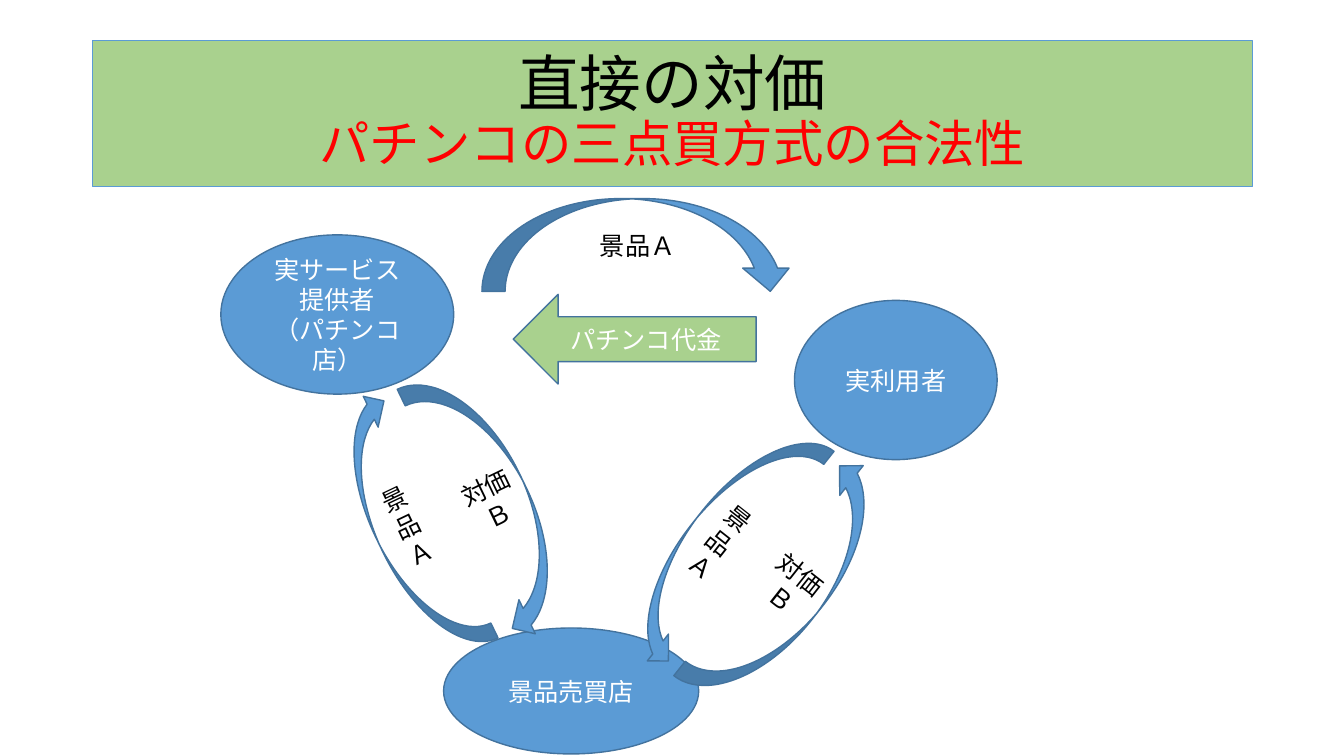
"""Build the slide on the three-party prize exchange."""
from dataclasses import dataclass

from pptx import Presentation
from pptx.dml.color import RGBColor
from pptx.enum.shapes import MSO_SHAPE
from pptx.enum.text import MSO_ANCHOR, PP_ALIGN
from pptx.shapes.autoshape import Shape
from pptx.slide import Slide
from pptx.text.text import _Paragraph
from pptx.util import Inches, Pt

BLUE, GREEN, OUTLINE = "5B9BD5", "A9D18E", "43739E"
BLACK, WHITE, RED = "000000", "FFFFFF", "FF0000"


@dataclass(frozen=True)
class Figure:
    kind: MSO_SHAPE
    place: tuple[float, float, float, float]
    lines: tuple[str, ...]
    fill: str = BLUE
    text_color: str = WHITE


@dataclass(frozen=True)
class Exchange:
    place: tuple[float, float, float, float]
    text: str
    rotation: float
    flips: tuple[str, ...]
    direction: str


PARTIES = (
    Figure(MSO_SHAPE.OVAL, (2.19, 2.33, 2.31, 1.58), ("実サービス提供者", "（パチンコ店）")),
    Figure(MSO_SHAPE.OVAL, (4.4, 6.23, 2.53, 1.25), ("景品売買店",)),
    Figure(MSO_SHAPE.OVAL, (7.88, 2.98, 2.01, 1.58), ("実利用者",)),
    Figure(MSO_SHAPE.CURVED_DOWN_ARROW, (4.78, 1.97, 3.09, 0.92), ("景品Ａ",), text_color=BLACK),
)
EXCHANGES = (
    Exchange((5.73, 5.05, 2.82, 0.66), "景品Ａ", 128.3, ("flipV",), "vert"),
    Exchange((6.43, 5.45, 2.84, 0.73), "対価Ｂ", 128.3, ("flipH",), "vert270"),
    Exchange((2.65, 4.89, 2.78, 0.66), "景品Ａ", 64.3, ("flipH", "flipV"), "vert"),
    Exchange((3.47, 4.61, 2.82, 0.73), "対価Ｂ", 64.3, (), "vert270"),
)
PAYMENT = Figure(MSO_SHAPE.LEFT_ARROW, (5.09, 2.92, 2.41, 0.89), ("パチンコ代金",), GREEN)


def color(value: str) -> RGBColor:
    """Turn a hex string into a colour."""
    return RGBColor.from_string(value)


def write(para: _Paragraph, text: str, *, size: float = 18, hue: str = WHITE) -> None:
    """Add a formatted span to a centred paragraph."""
    para.alignment = PP_ALIGN.CENTER
    span = para.add_run()
    span.text = text
    span.font.name = "Calibri"
    span.font.size = Pt(size)
    span.font.color.rgb = color(hue)


def add_box(page: Slide, kind: MSO_SHAPE, place: tuple[float, float, float, float],
            fill: str, line: str = OUTLINE, width: float = 1) -> Shape:
    """Draw a filled and outlined shape."""
    box = page.shapes.add_shape(kind, *map(Inches, place))
    box.shadow.inherit = False
    box.fill.solid()
    box.fill.fore_color.rgb = color(fill)
    box.line.color.rgb = color(line)
    box.line.width = Pt(width)
    box.text_frame.word_wrap = True
    box.text_frame.vertical_anchor = MSO_ANCHOR.MIDDLE
    return box


def add_title(page: Slide) -> None:
    """Draw the title band."""
    box = add_box(page, MSO_SHAPE.RECTANGLE, (0.92, 0.4, 11.5, 1.45), GREEN, BLUE, 0.75)
    para = box.text_frame.paragraphs[0]
    para.line_spacing = 0.9
    write(para, "直接の対価", size=44, hue=BLACK)
    para.add_line_break()
    write(para, "パチンコの三点買方式の合法性", size=36, hue=RED)


def add_figure(page: Slide, figure: Figure) -> None:
    """Draw a labelled shape."""
    frame = add_box(page, figure.kind, figure.place, figure.fill).text_frame
    for index, line in enumerate(figure.lines):
        para = frame.add_paragraph() if index else frame.paragraphs[0]
        write(para, line, hue=figure.text_color)


def add_exchange(page: Slide, exchange: Exchange) -> None:
    """Draw a turned curved arrow with vertical text."""
    box = add_box(page, MSO_SHAPE.CURVED_DOWN_ARROW, exchange.place, BLUE)
    box.rotation = exchange.rotation
    for index, value in enumerate((0.25, 0.514, 0.25)):
        box.adjustments[index] = value
    for flip in exchange.flips:
        box._element.spPr.xfrm.set(flip, "1")
    box.text_frame._txBody.bodyPr.set("vert", exchange.direction)
    write(box.text_frame.paragraphs[0], exchange.text, hue=BLACK)


def main() -> None:
    """Build and save the deck."""
    deck = Presentation()
    deck.slide_width, deck.slide_height = Inches(13.33), Inches(7.5)
    page = deck.slides.add_slide(deck.slide_layouts[6])
    add_title(page)
    for party in PARTIES:
        add_figure(page, party)
    for exchange in EXCHANGES:
        add_exchange(page, exchange)
    add_figure(page, PAYMENT)
    deck.save("out.pptx")


if __name__ == "__main__":
    main()
